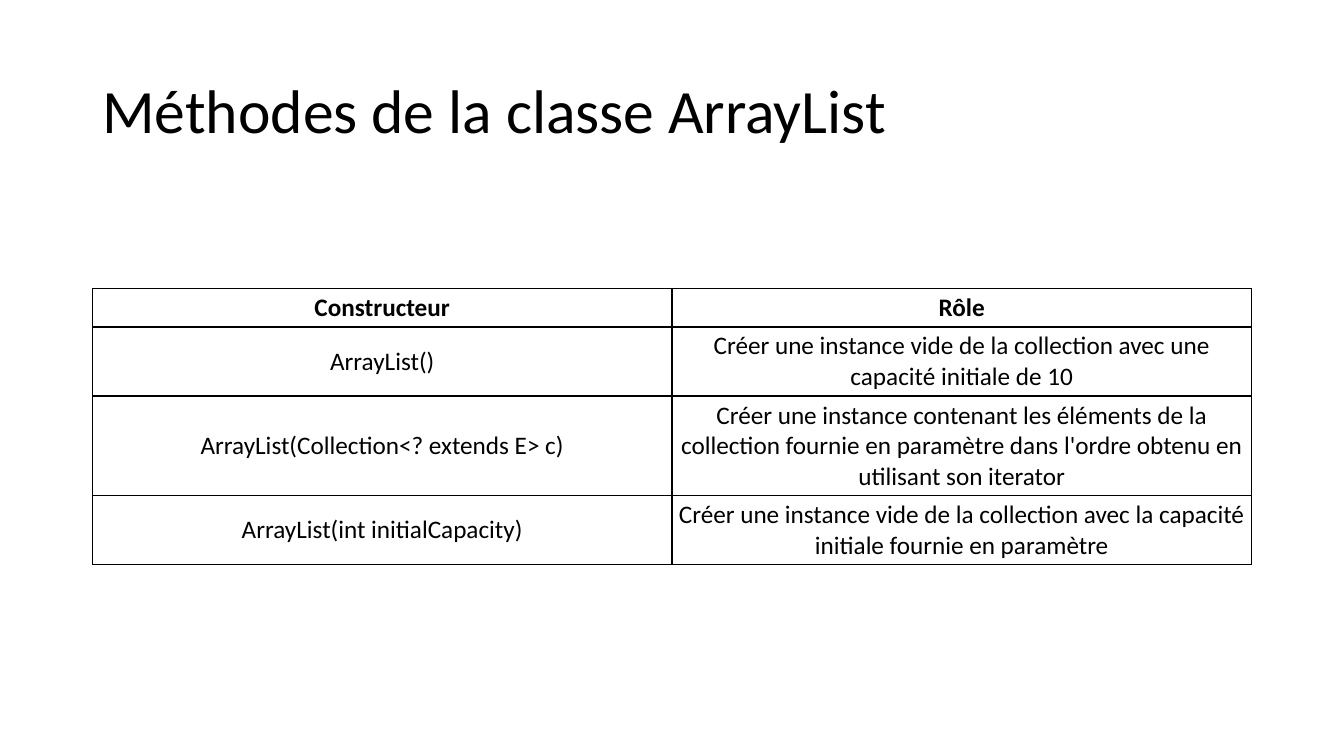
from dataclasses import dataclass

from lxml import etree
from pptx import Presentation
from pptx import util as u
from pptx.dml.color import RGBColor
from pptx.enum import text
from pptx.oxml import ns


@dataclass(frozen=True)
class Theme:
    font: str = "Calibri"
    ink: str = "000000"
    title_size: int = 44
    table_size: int = 18
    border_width: int = 1


THEME = Theme()
LEFT, WIDTH = u.Cm(2.33), u.Cm(29.21)
CELL_MARGIN = u.Cm(0.1)

CONSTRUCTORS = [
    ("Constructeur", "Rôle"),
    ("ArrayList()",
     "Créer une instance vide de la collection avec une capacité initiale de 10"),
    ("ArrayList(Collection<? extends E> c)",
     "Créer une instance contenant les éléments de la collection fournie en "
     "paramètre dans l'ordre obtenu en utilisant son iterator"),
    ("ArrayList(int initialCapacity)",
     "Créer une instance vide de la collection avec la capacité initiale "
     "fournie en paramètre"),
]
LINES_PER_ROW = [1, 2, 3, 2]


def format_runs(para, size, bold=False):
    for span in para.runs:
        span.font.name = THEME.font
        span.font.size = u.Pt(size)
        span.font.bold = bold
        span.font.color.rgb = RGBColor.from_string(THEME.ink)


def add_title(page, wording):
    box = page.shapes.add_textbox(LEFT, u.Cm(1.01), WIDTH, u.Cm(3.68))
    frame = box.text_frame
    frame.word_wrap = True
    frame.vertical_anchor = text.MSO_ANCHOR.MIDDLE
    frame.text = wording
    para = frame.paragraphs[0]
    para.line_spacing = 0.9
    format_runs(para, THEME.title_size)


def add_borders(cell):
    properties = cell._tc.get_or_add_tcPr()
    for side in ("a:lnL", "a:lnR", "a:lnT", "a:lnB"):
        line = etree.SubElement(properties, ns.qn(side),
                                w=str(u.Pt(THEME.border_width)))
        fill = etree.SubElement(line, ns.qn("a:solidFill"))
        etree.SubElement(fill, ns.qn("a:srgbClr"), val=THEME.ink)


def fill_cell(cell, wording, bold):
    cell.text = wording
    cell.vertical_anchor = text.MSO_ANCHOR.MIDDLE
    cell.margin_left = cell.margin_right = CELL_MARGIN
    cell.margin_top = cell.margin_bottom = CELL_MARGIN
    add_borders(cell)
    cell.fill.background()
    para = cell.text_frame.paragraphs[0]
    para.alignment = text.PP_ALIGN.CENTER
    format_runs(para, THEME.table_size, bold)


def add_grid(page, rows, line_counts):
    """Add a table whose row heights follow the number of text lines."""
    heights = [u.Cm(0.2 + 0.77 * count) for count in line_counts]
    table = page.shapes.add_table(len(rows), len(rows[0]), LEFT, u.Cm(7.27),
                                  WIDTH, sum(heights)).table
    table.horz_banding = False
    for row, height, wordings in zip(table.rows, heights, rows):
        row.height = height
        for cell, wording in zip(row.cells, wordings):
            fill_cell(cell, wording, bold=wordings is rows[0])


def main():
    deck = Presentation()
    deck.slide_width, deck.slide_height = u.Cm(33.87), u.Cm(19.05)
    page = deck.slides.add_slide(deck.slide_layouts[6])
    add_title(page, "Méthodes de la classe ArrayList")
    add_grid(page, CONSTRUCTORS, LINES_PER_ROW)
    deck.save("out.pptx")


if __name__ == "__main__":
    main()
